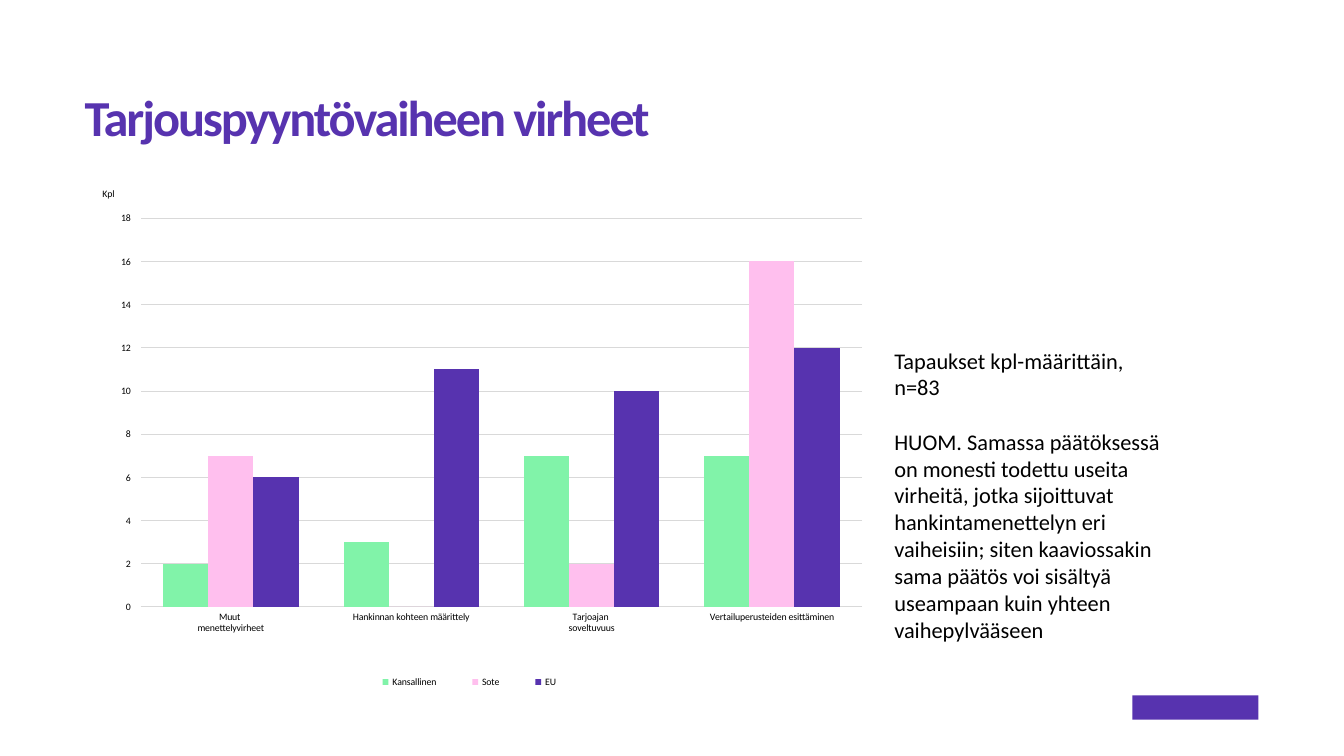
import pptx
import pptx.chart.data
import pptx.dml.color
import pptx.enum.chart
import pptx.enum.shapes
import pptx.oxml
import pptx.oxml.ns
import pptx.util
from pptx.util import Inches

PURPLE, GREEN, PINK = "5733AF", "81F3A9", "FFBFEE"
BLACK, GREY = "000000", "D9D9D9"

CASES = ["Muut \nmenettelyvirheet", "Hankinnan kohteen määrittely",
         "Tarjoajan \nsoveltuvuus", "Vertailuperusteiden esittäminen"]
SERIES = [("Kansallinen", GREEN, (2, 3, 7, 7)),
          ("Sote", PINK, (7, 0, 2, 16)),
          ("EU", PURPLE, (6, 11, 10, 12))]
NOTES = [
    ["Tapaukset kpl-määrittäin,", "n=83"],
    ["HUOM. Samassa päätöksessä", "on monesti todettu useita",
     "virheitä, jotka sijoittuvat", "hankintamenettelyn eri",
     "vaiheisiin; siten kaaviossakin", "sama päätös voi sisältyä",
     "useampaan kuin yhteen", "vaihepylvääseen"],
]


def color(code):
    return pptx.dml.color.RGBColor.from_string(code)


class Deck:
    face = "Calibri"

    def __init__(self, slide):
        self.slide = slide

    def style(self, font, size, code=BLACK, bold=False):
        font.name = self.face
        font.size = pptx.util.Pt(size)
        font.bold = bold
        font.color.rgb = color(code)

    def frame(self, left, top, width, height, wrap):
        box = self.slide.shapes.add_textbox(
            Inches(left), Inches(top), Inches(width), Inches(height))
        frame = box.text_frame
        frame.word_wrap = wrap
        frame.margin_left = frame.margin_right = 0
        frame.margin_top = frame.margin_bottom = 0
        return frame

    def title(self, text, *area):
        line = self.frame(*area, True).paragraphs[0]
        run = line.add_run()
        run.text = text
        line.line_spacing = 0.9
        self.style(line.font, 36, PURPLE, True)
        run.font._element.set("spc", "-150")

    def notes(self, groups, *area):
        frame = self.frame(*area, False)
        for part, group in enumerate(groups):
            for row, text in enumerate(group):
                first = part == 0 and row == 0
                line = frame.paragraphs[0] if first else frame.add_paragraph()
                line.text = text
                if part and row == 0:
                    line.space_before = pptx.util.Pt(19.5)
                self.style(line.font, 16)

    def badge(self, left, top, width, height):
        shape = self.slide.shapes.add_shape(
            pptx.enum.shapes.MSO_SHAPE.RECTANGLE,
            Inches(left), Inches(top), Inches(width), Inches(height))
        shape.shadow.inherit = False
        shape.fill.solid()
        shape.fill.fore_color.rgb = color(PURPLE)
        shape.line.fill.background()

    def place(self, parent, index, inner=False, **sizes):
        for old in parent.xpath("c:layout"):
            parent.remove(old)
        modes = "".join(f'<c:{key}Mode val="edge"/>' for key in "xy")
        spots = "".join(f'<c:{key} val="{size}"/>' for key, size in sizes.items())
        target = '<c:layoutTarget val="inner"/>' if inner else ""
        parent.insert(index, pptx.oxml.parse_xml(
            f'<c:layout {pptx.oxml.ns.nsdecls("c")}><c:manualLayout>'
            f'{target}{modes}{spots}</c:manualLayout></c:layout>'))

    def rule(self, line):
        line.color.rgb = color(GREY)
        line.width = pptx.util.Pt(0.75)

    def chart(self, cats, series, unit, *area):
        enum = pptx.enum.chart
        data = pptx.chart.data.CategoryChartData()
        data.categories = cats
        for name, code, vals in series:
            data.add_series(name, vals)
        chart = self.slide.shapes.add_chart(
            enum.XL_CHART_TYPE.COLUMN_CLUSTERED, *map(Inches, area), data).chart
        chart.has_title = False
        self.style(chart.font, 7)

        plot = chart.plots[0]
        plot.gap_width = 100
        plot.overlap = 0
        plot.vary_by_categories = False
        for bars, (name, code, vals) in zip(plot.series, series):
            bars.format.fill.solid()
            bars.format.fill.fore_color.rgb = color(code)

        base, scale = chart.category_axis, chart.value_axis
        for axis in (base, scale):
            self.style(axis.tick_labels.font, 7)
        base.major_tick_mark = enum.XL_TICK_MARK.NONE
        self.rule(base.format.line)
        scale.minimum_scale, scale.maximum_scale = 0, 18
        scale.major_unit = 2
        scale.format.line.fill.background()
        self.rule(scale.major_gridlines.format.line)
        label = scale.axis_title.text_frame
        label.text = unit
        self.style(label.paragraphs[0].font, 7)

        chart.has_legend = True
        chart.legend.position = enum.XL_LEGEND_POSITION.BOTTOM
        chart.legend.include_in_layout = False
        self.style(chart.legend.font, 7)

        root = chart.element
        self.place(root.xpath(".//c:plotArea")[0], 0, True,
                   x=0.08, y=0.07, w=0.9, h=0.7)
        self.place(root.xpath(".//c:legend")[0], 1, x=0.34, y=0.88, w=0.3, h=0.05)
        head = root.xpath(".//c:valAx/c:title")[0]
        self.place(head, 1, x=0.03, y=0.01)
        body = head.xpath(".//a:bodyPr")[0]
        body.set("rot", "0")
        body.set("vert", "horz")


def main():
    show = pptx.Presentation()
    show.slide_width, show.slide_height = Inches(13.33), Inches(7.5)
    deck = Deck(show.slides.add_slide(show.slide_layouts[6]))
    deck.badge(11.23, 6.9, 1.25, 0.24)
    deck.title("Tarjouspyyntövaiheen virheet", 0.84, 0.92, 11.66, 0.63)
    deck.chart(CASES, SERIES, "Kpl", 0.76, 1.78, 7.95, 5.51)
    deck.notes(NOTES, 8.87, 3.44, 4.33, 2.83)
    show.save("out.pptx")


if __name__ == "__main__":
    main()
